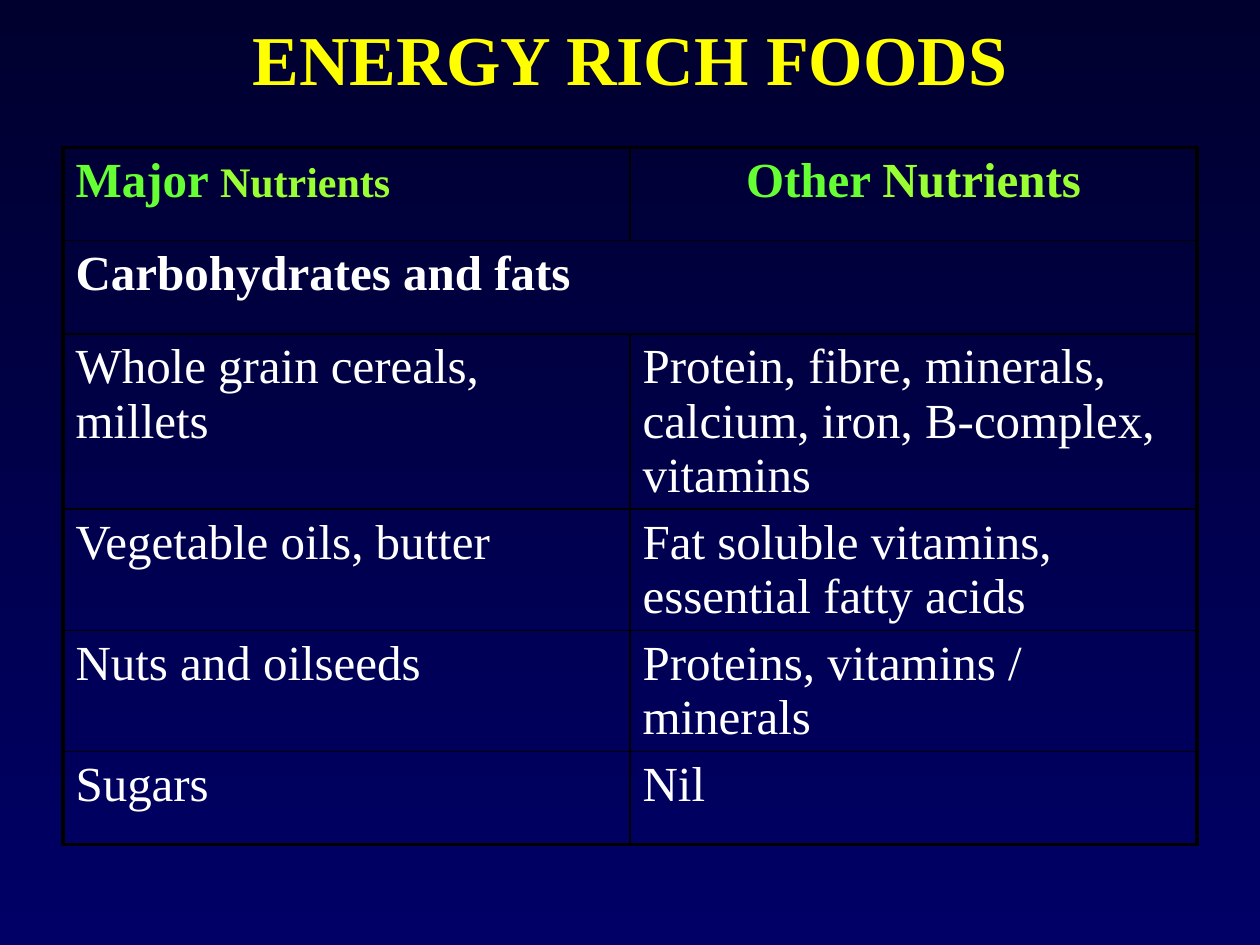
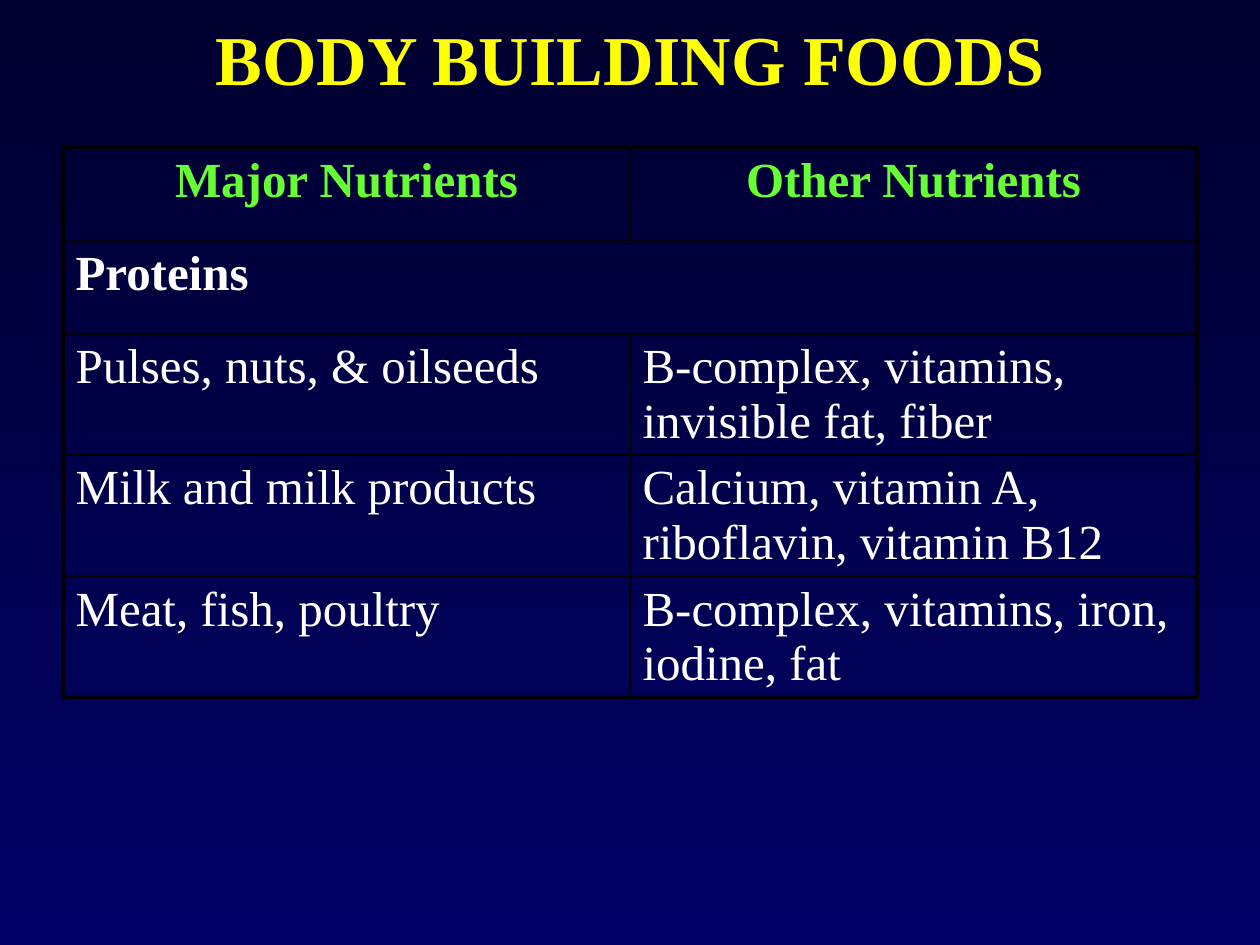
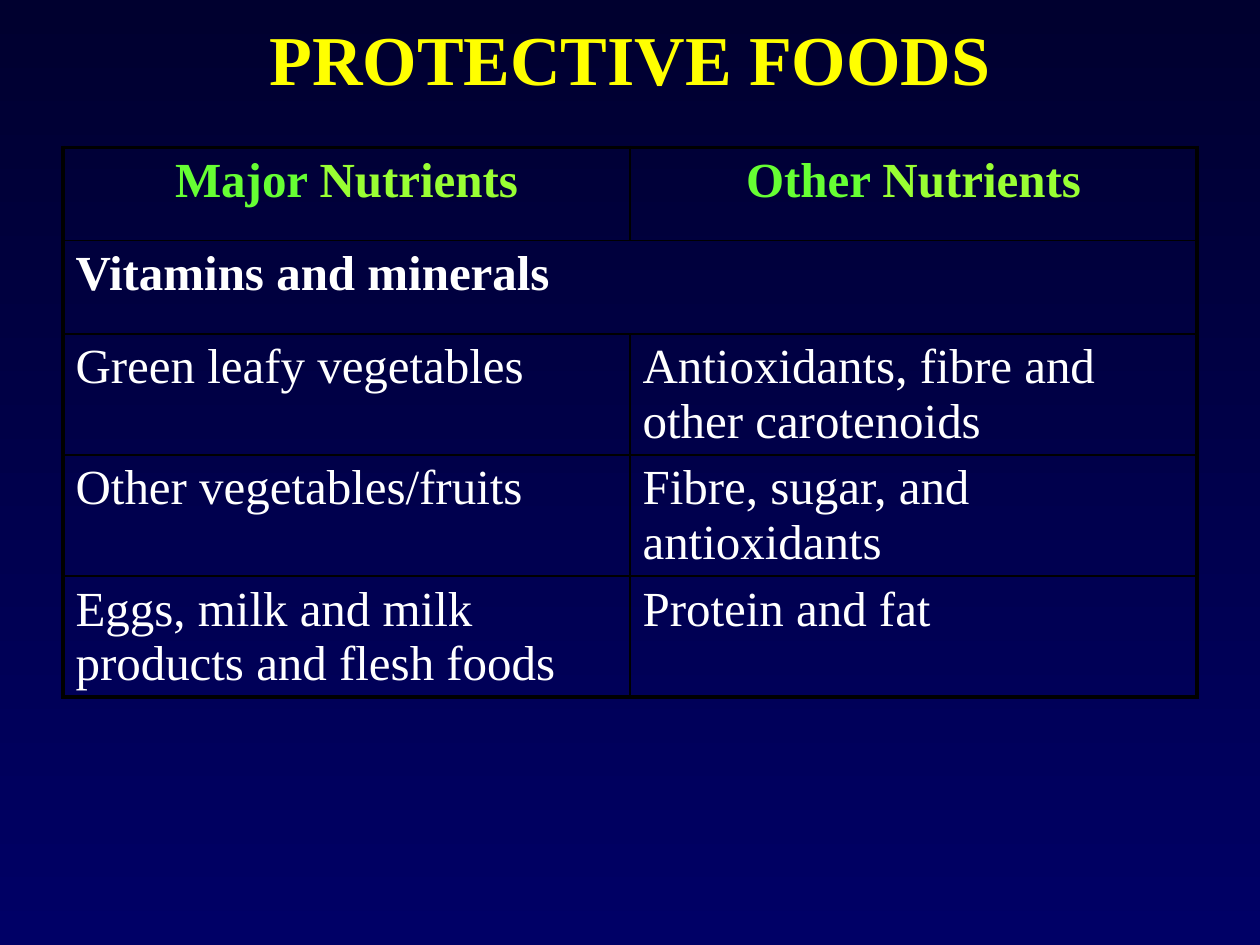
from dataclasses import dataclass
from typing import NamedTuple

from lxml import etree
from pptx import Presentation
from pptx import util as u
from pptx.dml.color import RGBColor
from pptx.enum import text
from pptx.oxml import ns

LEFT = text.PP_ALIGN.LEFT
CENTER = text.PP_ALIGN.CENTER


@dataclass(frozen=True)
class Theme:
    font: str = "Times New Roman"
    night: str = "00002F"
    navy: str = "000066"
    yellow: str = "FFFF00"
    green: str = "66FF33"
    lime: str = "99FF33"
    white: str = "FFFFFF"
    border: str = "000000"
    title_size: float = 40
    body_size: float = 28
    small_size: float = 24
    outer_line: float = 2.25
    inner_line: float = 1


THEME = Theme()


class Word(NamedTuple):
    text: str
    color: str
    size: float = THEME.body_size


class Heading(NamedTuple):
    words: tuple[Word, ...]
    align: text.PP_ALIGN = CENTER


class Food(NamedTuple):
    name: str
    others: str


@dataclass(frozen=True)
class FoodGroup:
    title: str
    major: Heading
    other: Heading
    nutrients: str
    foods: tuple[Food, ...]
    table_height: float = 4.58


def two_tone(first: str, size: float = THEME.body_size) -> tuple[Word, ...]:
    return Word(f"{first} ", THEME.green), Word("Nutrients", THEME.lime, size)


GROUPS = (
    FoodGroup(
        "ENERGY RICH FOODS",
        Heading(two_tone("Major", THEME.small_size), LEFT),
        Heading(two_tone("Other")),
        "Carbohydrates and fats",
        (
            Food("Whole grain cereals, millets",
                 "Protein, fibre, minerals, calcium, iron, B-complex, vitamins"),
            Food("Vegetable oils, butter", "Fat soluble vitamins, essential fatty acids"),
            Food("Nuts and oilseeds", "Proteins, vitamins / minerals"),
            Food("Sugars", "Nil"),
        ),
        table_height=5.79,
    ),
    FoodGroup(
        "BODY BUILDING FOODS",
        Heading((Word("Major Nutrients", THEME.green),)),
        Heading((Word("Other Nutrients", THEME.green),)),
        "Proteins",
        (
            Food("Pulses, nuts, & oilseeds", "B-complex, vitamins, invisible fat, fiber"),
            Food("Milk and milk products", "Calcium, vitamin A, riboflavin, vitamin B12"),
            Food("Meat, fish, poultry", "B-complex, vitamins, iron, iodine, fat"),
        ),
    ),
    FoodGroup(
        "PROTECTIVE FOODS",
        Heading(two_tone("Major")),
        Heading(two_tone("Other")),
        "Vitamins and minerals",
        (
            Food("Green leafy vegetables", "Antioxidants, fibre and other carotenoids"),
            Food("Other vegetables/fruits", "Fibre, sugar, and antioxidants"),
            Food("Eggs, milk and milk products and flesh foods", "Protein and fat"),
        ),
    ),
)


def write(tf, words: tuple[Word, ...], align: text.PP_ALIGN = LEFT, bold: bool = False) -> None:
    p = tf.paragraphs[0]
    p.alignment = align
    p.font.name = THEME.font
    p.font.bold = bold
    for word in words:
        r = p.add_run()
        r.text = word.text
        font = r.font if len(words) > 1 else p.font
        font.size = u.Pt(word.size)
        font.color.rgb = RGBColor.from_string(word.color)


def set_borders(cell, outer: dict[str, bool]) -> None:
    tc_pr = cell._tc.get_or_add_tcPr()
    for side, is_outer in outer.items():
        width = u.Pt(THEME.outer_line if is_outer else THEME.inner_line)
        ln = etree.SubElement(tc_pr, ns.qn(f"a:ln{side}"), w=str(int(width)))
        fill = etree.SubElement(ln, ns.qn("a:solidFill"))
        etree.SubElement(fill, ns.qn("a:srgbClr"), val=THEME.border)


def add_title(s, title: str) -> None:
    sp = s.shapes.title
    sp.left, sp.top = u.Inches(0.75), u.Inches(0.08)
    sp.width, sp.height = u.Inches(8.5), u.Inches(0.75)
    tf = sp.text_frame
    tf.vertical_anchor = text.MSO_ANCHOR.MIDDLE
    write(tf, (Word(title, THEME.yellow, THEME.title_size),), CENTER, bold=True)


def add_food_table(s, group: FoodGroup) -> None:
    n_rows = len(group.foods) + 2
    height = u.Inches(group.table_height)
    frame = s.shapes.add_table(n_rows, 2, u.Inches(0.5), u.Inches(1.17), u.Inches(9), height)
    table = frame.table
    table.first_row = table.horz_banding = False
    for row in table.rows:
        row.height = u.Inches(0.74)
    frame.height = height

    table.cell(1, 0).merge(table.cell(1, 1))
    for i in range(n_rows):
        for j in range(2):
            cell = table.cell(i, j)
            set_borders(cell, {
                "L": j == 0,
                "R": j == 1 or cell.is_merge_origin,
                "T": i == 0,
                "B": i == n_rows - 1,
            })
            cell.fill.background()

    for j, heading in enumerate((group.major, group.other)):
        write(table.cell(0, j).text_frame, heading.words, heading.align, bold=True)
    write(table.cell(1, 0).text_frame, (Word(group.nutrients, THEME.white),), bold=True)
    for i, food in enumerate(group.foods, start=2):
        for j, entry in enumerate(food):
            write(table.cell(i, j).text_frame, (Word(entry, THEME.white),))


def set_background(master) -> None:
    fill = master.background.fill
    fill.gradient()
    fill.gradient_angle = 270
    for stop, color in zip(fill.gradient_stops, (THEME.night, THEME.navy)):
        stop.color.rgb = RGBColor.from_string(color)


def main() -> None:
    prs = Presentation()
    prs.slide_width, prs.slide_height = u.Inches(10), u.Inches(7.5)
    set_background(prs.slide_master)
    title_only = prs.slide_layouts.get_by_name("Title Only")
    for group in GROUPS:
        s = prs.slides.add_slide(title_only)
        add_title(s, group.title)
        add_food_table(s, group)
    prs.save("out.pptx")


if __name__ == "__main__":
    main()
